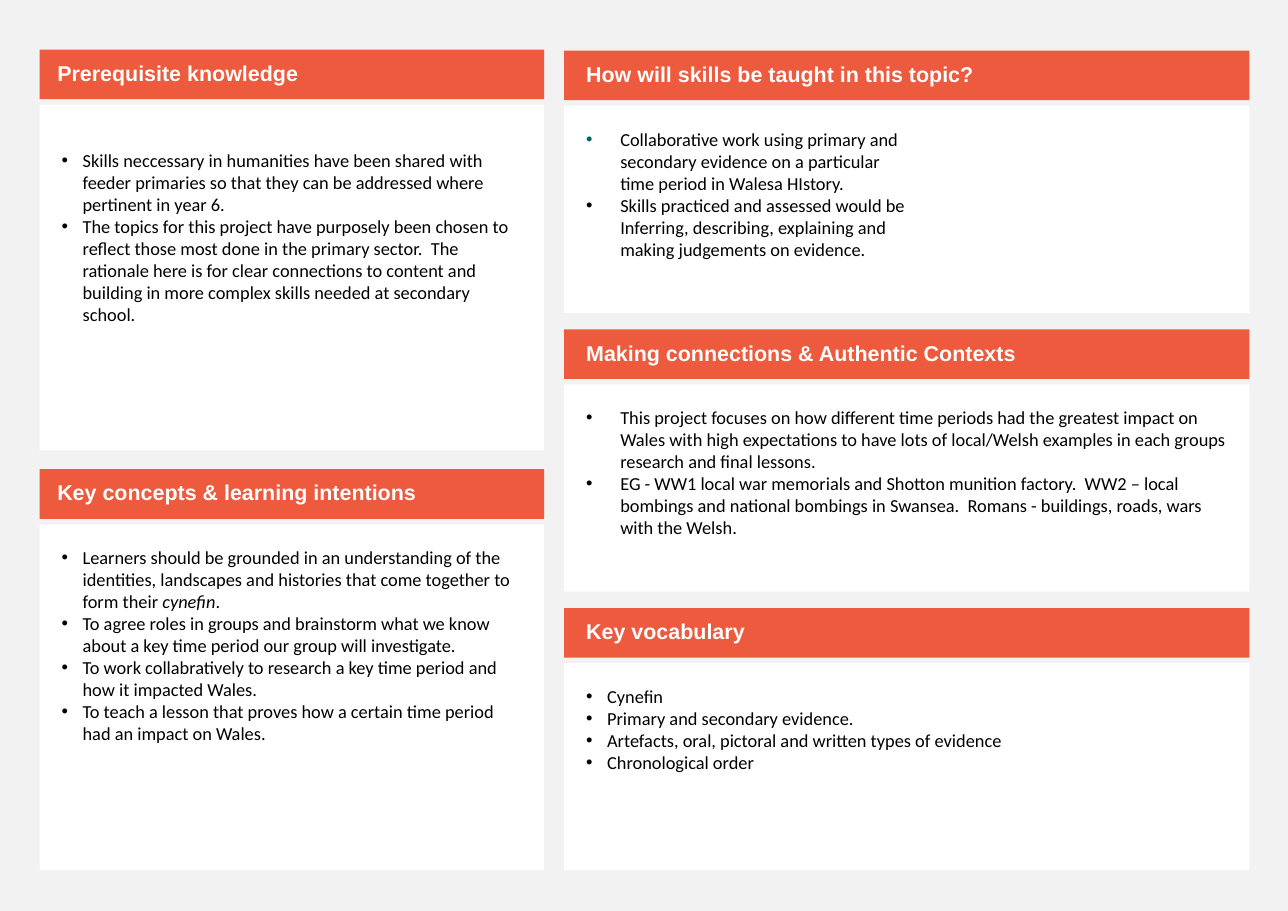
from lxml import etree
from pptx import Presentation
from pptx import util as u
from pptx.dml.color import RGBColor
from pptx.enum import shapes, text
from pptx.oxml.ns import qn

HEADER_HEIGHT = 0.45
BODY_OFFSET = 0.5


def colour(value):
    return RGBColor.from_string(value)


class TopicSheet:
    """Holds the slide and the style shared by its panels."""
    ACCENT, WHITE, BLACK, PAGE = "ED5A3E", "FFFFFF", "000000", "F2F2F2"

    def __init__(self, slide):
        self.slide = slide
        slide.background.fill.solid()
        slide.background.fill.fore_color.rgb = colour(self.PAGE)

    def block(self, left, top, width, height, fill, insets, anchor):
        """Draw a filled rectangle and return its text frame."""
        area = self.slide.shapes.add_shape(
            shapes.MSO_SHAPE.RECTANGLE,
            *(u.Inches(length) for length in (left, top, width, height)))
        area.shadow.inherit = False
        area.fill.solid()
        area.fill.fore_color.rgb = colour(fill)
        area.line.fill.background()
        frame = area.text_frame
        frame.word_wrap = True
        frame.vertical_anchor = anchor
        (frame.margin_left, frame.margin_top,
         frame.margin_right, frame.margin_bottom) = map(u.Inches, insets)
        return frame

    def run(self, paragraph, words, font, size, ink, bold=False, italic=False):
        piece = paragraph.add_run()
        piece.text = words
        piece.font.name = font
        piece.font.size = u.Pt(size)
        piece.font.color.rgb = colour(ink)
        piece.font.bold = bold
        piece.font.italic = italic

    def bullet(self, paragraph, indent, ink):
        paragraph.alignment = text.PP_ALIGN.LEFT
        props = paragraph._p.get_or_add_pPr()
        props.set("marL", str(u.Inches(indent)))
        props.set("indent", str(-u.Inches(indent)))
        tint = etree.SubElement(props, qn("a:buClr"))
        etree.SubElement(tint, qn("a:srgbClr"), val=ink)
        etree.SubElement(props, qn("a:buFont"), typeface="Arial")
        etree.SubElement(props, qn("a:buChar"), char="•")

    def header(self, title, left, top, width, inset):
        frame = self.block(left, top, width, HEADER_HEIGHT, self.ACCENT,
                           (inset, 0.05, 0.1, 0.05), text.MSO_ANCHOR.MIDDLE)
        heading = frame.paragraphs[0]
        heading.alignment = text.PP_ALIGN.LEFT
        heading.line_spacing = 0.9
        self.run(heading, title, "Arial", 14, self.WHITE, bold=True)

    def body(self, points, left, top, width, height, indent=0.19,
             top_inset=0.2, columns=1, first_bullet=BLACK):
        """Each point is a list of runs; every second run is italic."""
        frame = self.block(left, top, width, height, self.WHITE,
                           (0.2, top_inset, 0.2, 0.2), text.MSO_ANCHOR.TOP)
        if columns > 1:
            frame._txBody.bodyPr.set("numCol", str(columns))
        for number, point in enumerate(points):
            paragraph = frame.add_paragraph() if number else frame.paragraphs[0]
            self.bullet(paragraph, indent, self.BLACK if number else first_bullet)
            for position, words in enumerate(point):
                self.run(paragraph, words, "Calibri", 12, self.BLACK,
                         italic=position % 2 == 1)

    def column(self, panels, left, top, width, pitch, height, title_inset):
        """Stack panels, each a title, its points and its body options."""
        for row, (title, points, options) in enumerate(panels):
            panel_top = top + row * pitch
            self.header(title, left, panel_top, width, title_inset)
            self.body(points, left, panel_top + BODY_OFFSET, width, height, **options)


KNOWLEDGE = [
    ("Prerequisite knowledge", [
        ["Skills neccessary in humanities have been shared with feeder primaries "
         "so that they can be addressed where pertinent in year 6."],
        ["The topics for this project have purposely been chosen to reflect those "
         "most done in the primary sector.  The rationale here is for clear "
         "connections to content and building in more complex skills needed at "
         "secondary school."],
    ], {"top_inset": 0.4}),
    ("Key concepts & learning intentions", [
        ["Learners should be grounded in an understanding of the identities, "
         "landscapes and histories that come together to form their ",
         "cynefin", "."],
        ["To agree roles in groups and brainstorm what we know about a key time "
         "period our group will investigate."],
        ["To work collabratively to research a key time period and how it "
         "impacted Wales."],
        ["To teach a lesson that proves how a certain time period had an impact "
         "on Wales."],
    ], {}),
]

SKILLS = [
    ("How will skills be taught in this topic?", [
        ["Collaborative work using primary and secondary evidence on a particular "
         "time period in Walesa HIstory."],
        ["Skills practiced and assessed would be Inferring, describing, "
         "explaining and making judgements on evidence."],
    ], {"indent": 0.31, "columns": 2, "first_bullet": "00685E"}),
    ("Making connections & Authentic Contexts", [
        ["This project focuses on how different time periods had the greatest "
         "impact on Wales with high expectations to have lots of local/Welsh "
         "examples in each groups research and final lessons."],
        ["EG - WW1 local war memorials and Shotton munition factory.  WW2 – local "
         "bombings and national bombings in Swansea.  Romans - buildings, roads, "
         "wars with the Welsh."],
    ], {"indent": 0.31}),
    ("Key vocabulary", [
        ["Cynefin"],
        ["Primary and secondary evidence."],
        ["Artefacts, oral, pictoral and written types of evidence"],
        ["Chronological order"],
    ], {}),
]


def main():
    deck = Presentation()
    deck.slide_width, deck.slide_height = u.Inches(11.69), u.Inches(8.27)
    sheet = TopicSheet(deck.slides.add_slide(deck.slide_layouts[6]))
    sheet.column(KNOWLEDGE, left=0.36, top=0.45, width=4.58, pitch=3.81,
                 height=3.14, title_inset=0.16)
    sheet.column(SKILLS, left=5.12, top=0.46, width=6.22, pitch=2.53,
                 height=1.88, title_inset=0.2)
    deck.save("out.pptx")


if __name__ == "__main__":
    main()
